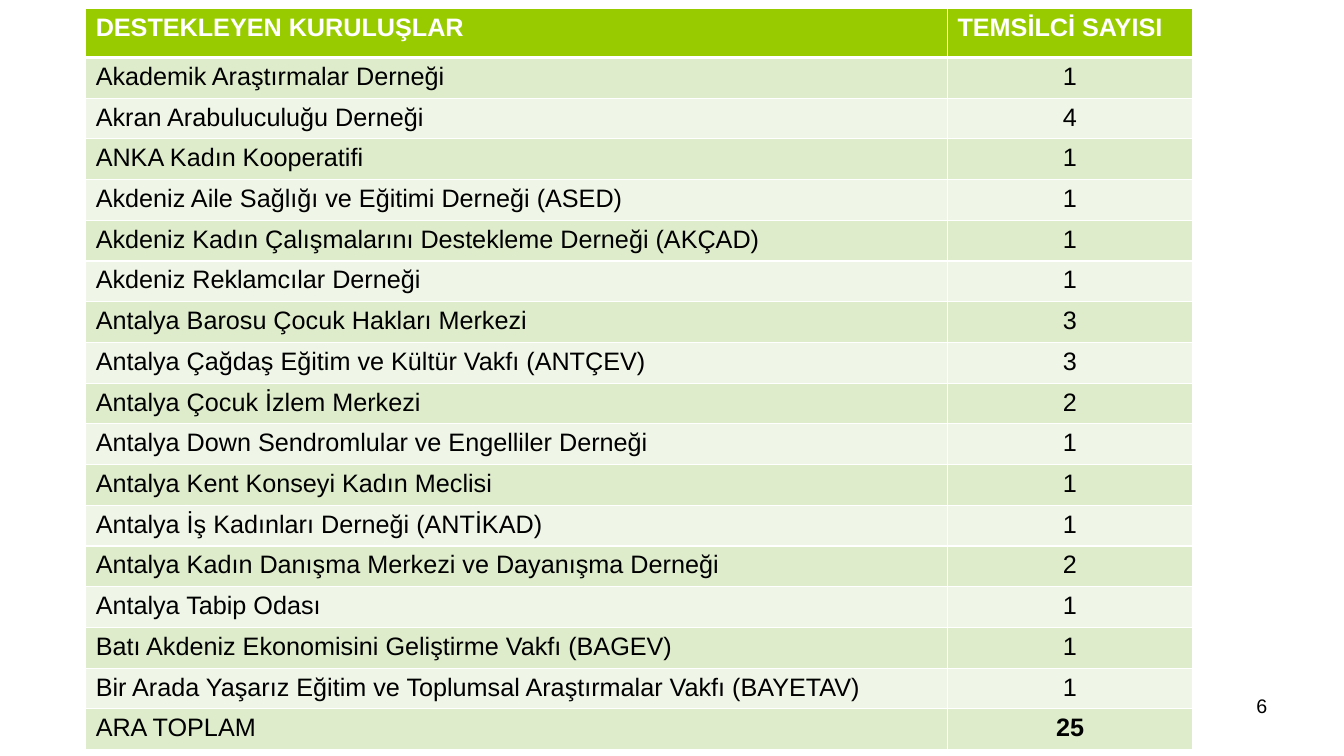
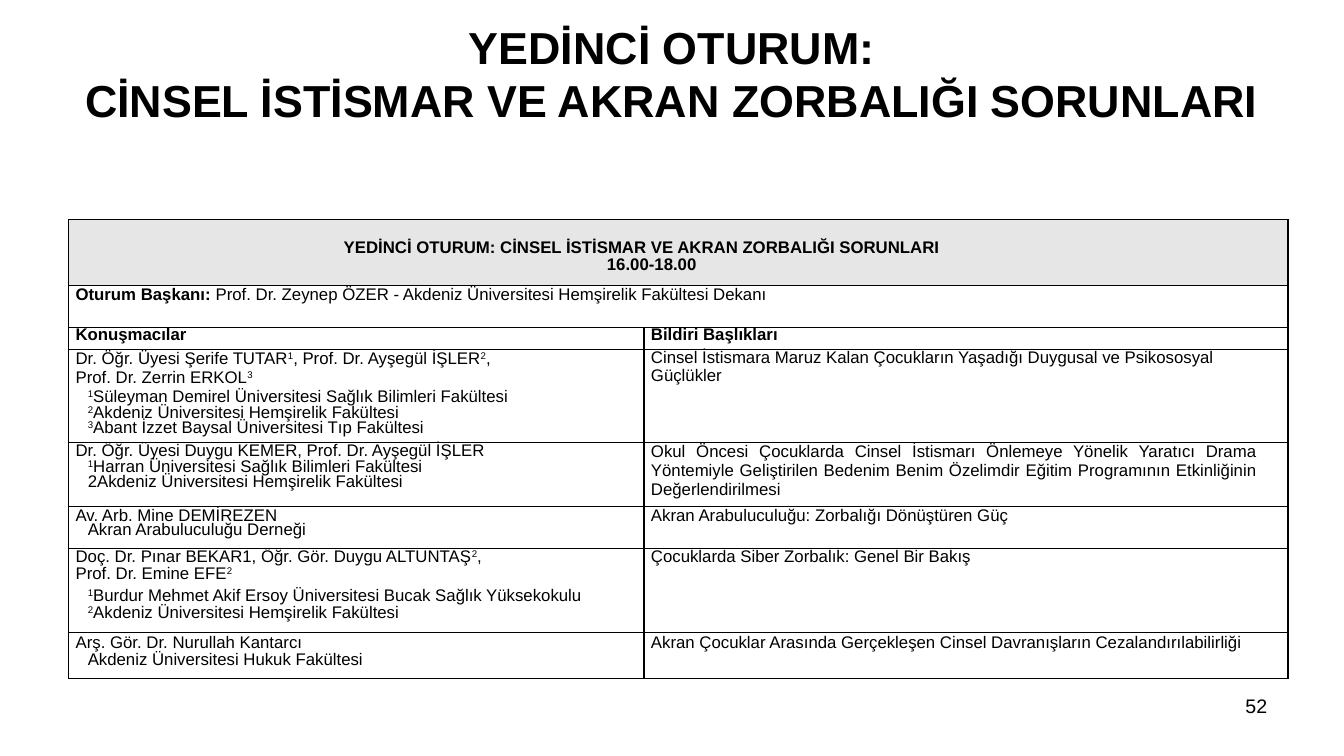
from dataclasses import dataclass

import lxml.etree
import pptx
import pptx.dml.color
import pptx.enum.text
import pptx.oxml.ns
import pptx.util

Pt = pptx.util.Pt
ALIGN = pptx.enum.text.PP_ALIGN
ANCHOR = pptx.enum.text.MSO_ANCHOR

# Shared style
FONT = "Arial"
BLACK, WHITE = "000000", "FFFFFF"
HEADER_GREEN, BANDS = "99CC00", ("DEECCC", "EFF6E7")
SESSION_GREY = "E7E6E6"
NAME_INDENT, SCHOOL_INDENT = 5, 13.7

# Supporting organisations
SUPPORTERS = [
    ("Akademik Araştırmalar Derneği", 1),
    ("Akran Arabuluculuğu Derneği", 4),
    ("ANKA Kadın Kooperatifi", 1),
    ("Akdeniz Aile Sağlığı ve Eğitimi Derneği (ASED)", 1),
    ("Akdeniz Kadın Çalışmalarını Destekleme Derneği (AKÇAD)", 1),
    ("Akdeniz Reklamcılar Derneği", 1),
    ("Antalya Barosu Çocuk Hakları Merkezi", 3),
    ("Antalya Çağdaş Eğitim ve Kültür Vakfı (ANTÇEV)", 3),
    ("Antalya Çocuk İzlem Merkezi", 2),
    ("Antalya Down Sendromlular ve Engelliler Derneği", 1),
    ("Antalya Kent Konseyi Kadın Meclisi", 1),
    ("Antalya İş Kadınları Derneği (ANTİKAD)", 1),
    ("Antalya Kadın Danışma Merkezi ve Dayanışma Derneği", 2),
    ("Antalya Tabip Odası", 1),
    ("Batı Akdeniz Ekonomisini Geliştirme Vakfı (BAGEV)", 1),
    ("Bir Arada Yaşarız Eğitim ve Toplumsal Araştırmalar Vakfı (BAYETAV)", 1),
]


@dataclass
class Line:
    """One paragraph; text between ^ marks is superscript, lead is bold."""
    text: str
    size: float = 12
    color: str = BLACK
    bold: bool = False
    align: object = ALIGN.LEFT
    indent: float = 0
    pitch: float = 0
    before: float = 0
    lead: str = ""


def name(text, pitch=0, **style):
    return Line(text, indent=NAME_INDENT, pitch=pitch, **style)


def school(text, pitch=0, before=0):
    return Line(text, indent=SCHOOL_INDENT, pitch=pitch, before=before)


# Session programme: speakers and paper titles, one pair a row
PAPERS = [
    ([name("Konuşmacılar", 11.7, bold=True)],
     name("Bildiri Başlıkları", 11.7, bold=True)),
    ([name("Dr. Öğr. Üyesi Şerife TUTAR^1^, Prof. Dr. Ayşegül İŞLER^2^,"),
      name("Prof. Dr. Zerrin ERKOL^3^"),
      school("^1^Süleyman Demirel Üniversitesi Sağlık Bilimleri Fakültesi"),
      school("^2^Akdeniz Üniversitesi Hemşirelik Fakültesi", 11.5),
      school("^3^Abant İzzet Baysal Üniversitesi Tıp Fakültesi", 10.7)],
     name("Cinsel İstismara Maruz Kalan Çocukların Yaşadığı Duygusal ve "
          "Psikososyal Güçlükler", 12.6)),
    ([name("Dr. Öğr. Üyesi Duygu KEMER, Prof. Dr. Ayşegül İŞLER", 12.5),
      school("^1^Harran Üniversitesi Sağlık Bilimleri Fakültesi", 11.4),
      school("2Akdeniz Üniversitesi Hemşirelik Fakültesi", 10.7)],
     name("Okul Öncesi Çocuklarda Cinsel İstismarı Önlemeye Yönelik Yaratıcı "
          "Drama Yöntemiyle Geliştirilen Bedenim Benim Özelimdir Eğitim "
          "Programının Etkinliğinin Değerlendirilmesi", align=ALIGN.JUSTIFY)),
    ([name("Av. Arb. Mine DEMİREZEN", 12.6),
      school("Akran Arabuluculuğu Derneği", 10.6)],
     name("Akran Arabuluculuğu: Zorbalığı Dönüştüren Güç", 12.6)),
    ([name("Doç. Dr. Pınar BEKAR1, Öğr. Gör. Duygu ALTUNTAŞ^2^,", 12.6),
      name("Prof. Dr. Emine EFE^2^", 12.6),
      school("^1^Burdur Mehmet Akif Ersoy Üniversitesi Bucak Sağlık Yüksekokulu",
             before=1.7),
      school("^2^Akdeniz Üniversitesi Hemşirelik Fakültesi", 10.8, 1.9)],
     name("Çocuklarda Siber Zorbalık: Genel Bir Bakış", 12.6)),
    ([name("Arş. Gör. Dr. Nurullah Kantarcı"),
      school("Akdeniz Üniversitesi Hukuk Fakültesi", 10.6, 1.9)],
     name("Akran Çocuklar Arasında Gerçekleşen Cinsel Davranışların "
          "Cezalandırılabilirliği")),
]


def rgb(color):
    return pptx.dml.color.RGBColor.from_string(color)


def write_line(paragraph, line):
    properties = paragraph._p.get_or_add_pPr()
    properties.set("marL", str(Pt(line.indent)))
    properties.set("indent", "0")
    paragraph.alignment = line.align
    if line.pitch:
        paragraph.line_spacing = Pt(line.pitch)
    if line.before:
        paragraph.space_before = Pt(line.before)
    font = paragraph.font
    font.name, font.size, font.bold = FONT, Pt(line.size), line.bold
    font.color.rgb = rgb(line.color)
    if line.lead:
        lead = paragraph.add_run()
        lead.text = line.lead
        lead.font.bold = True
    for index, piece in enumerate(line.text.split("^")):
        for part, text in enumerate(piece.split("\n")):
            if part:
                paragraph.add_line_break()
            if text:
                run = paragraph.add_run()
                run.text = text
                if index % 2:
                    run._r.get_or_add_rPr().set("baseline", "30000")


def write(frame, lines):
    for index, line in enumerate(lines):
        write_line(frame.add_paragraph() if index else frame.paragraphs[0], line)


def add_text(slide, left, top, width, height, line, anchor=ANCHOR.TOP):
    frame = slide.shapes.add_textbox(Pt(left), Pt(top), Pt(width), Pt(height)).text_frame
    frame.word_wrap = True
    frame.vertical_anchor = anchor
    write(frame, [line])


def add_page_number(slide, number):
    add_text(slide, 688.3, 491.8, 224, 37.4, Line(str(number), 14, align=ALIGN.RIGHT))


def add_grid(slide, left, top, widths, heights):
    table = slide.shapes.add_table(len(heights), len(widths), Pt(left), Pt(top),
                                   Pt(sum(widths)), Pt(sum(heights))).table
    table.first_row = table.horz_banding = False
    for column, width in zip(table.columns, widths):
        column.width = Pt(width)
    for row, height in zip(table.rows, heights):
        row.height = Pt(height)
    return table


def set_borders(cell, color, **widths):
    """Line every side 1 pt wide unless a width is given for L, R, T or B."""
    qn = pptx.oxml.ns.qn
    properties = cell._tc.get_or_add_tcPr()
    for side in "LRTB":
        border = lxml.etree.SubElement(properties, qn("a:ln" + side),
                                       w=str(Pt(widths.get(side, 1))))
        paint = lxml.etree.SubElement(border, qn("a:solidFill"))
        lxml.etree.SubElement(paint, qn("a:srgbClr"), val=color)


def set_fill(cell, color):
    if color:
        cell.fill.solid()
        cell.fill.fore_color.rgb = rgb(color)
    else:
        cell.fill.background()


def add_supporters(slide):
    rows = [("DESTEKLEYEN KURULUŞLAR", "TEMSİLCİ SAYISI"), *SUPPORTERS,
            ("ARA TOPLAM", sum(count for _, count in SUPPORTERS))]
    last = len(rows) - 1
    table = add_grid(slide, 61.2, 6, (615.6, 175), [35] + [29.1] * last)
    for r, row in enumerate(rows):
        for c, value in enumerate(row):
            cell = table.cell(r, c)
            header = r == 0
            set_borders(cell, WHITE, T=3 if r == 1 else 1, B=3 if header else 1)
            set_fill(cell, HEADER_GREEN if header else BANDS[(r - 1) % 2])
            write(cell.text_frame, [Line(
                str(value), 18, WHITE if header else BLACK,
                bold=header or (r == last and c == 1),
                align=ALIGN.CENTER if c and not header else ALIGN.LEFT)])


def add_programme(slide):
    table = add_grid(slide, 49, 157, (411, 460),
                     (46.8, 30.2, 15.8, 66.2, 46.1, 29.5, 60.5, 32.4))
    for cell in table.iter_cells():
        cell.margin_left = cell.margin_right = cell.margin_top = cell.margin_bottom = 0
        set_borders(cell, BLACK)
        set_fill(cell, None)

    # Full-width session heading and chair
    for r in range(2):
        table.cell(r, 0).merge(table.cell(r, 1))
    heading = table.cell(0, 0)
    set_fill(heading, SESSION_GREY)
    heading.margin_top = Pt(13.9)
    write(heading.text_frame, [
        Line("YEDİNCİ OTURUM: CİNSEL İSTİSMAR VE AKRAN ZORBALIĞI SORUNLARI",
             bold=True, indent=196.5, pitch=12.5),
        Line("16.00-18.00", bold=True, indent=384.5, pitch=12.5)])
    write(table.cell(1, 0).text_frame, [name(
        "Prof. Dr. Zeynep ÖZER - Akdeniz Üniversitesi Hemşirelik Fakültesi Dekanı",
        lead="Oturum Başkanı: ")])

    # Speakers and their papers
    for r, (speakers, paper) in enumerate(PAPERS, start=2):
        write(table.cell(r, 0).text_frame, speakers)
        write(table.cell(r, 1).text_frame, [paper])
        if paper.align == ALIGN.JUSTIFY:
            table.cell(r, 1).margin_right = Pt(22)


def main():
    deck = pptx.Presentation()
    deck.slide_width, deck.slide_height = Pt(960), Pt(540)
    blank = deck.slide_layouts[6]

    supporters = deck.slides.add_slide(blank)
    add_supporters(supporters)
    add_page_number(supporters, 6)

    session = deck.slides.add_slide(blank)
    add_text(session, 48, 21.6, 864, 61.2,
             Line("YEDİNCİ OTURUM:\nCİNSEL İSTİSMAR VE AKRAN ZORBALIĞI SORUNLARI",
                  32, bold=True, align=ALIGN.CENTER), ANCHOR.MIDDLE)
    add_programme(session)
    add_page_number(session, 52)

    deck.save("out.pptx")


if __name__ == "__main__":
    main()
